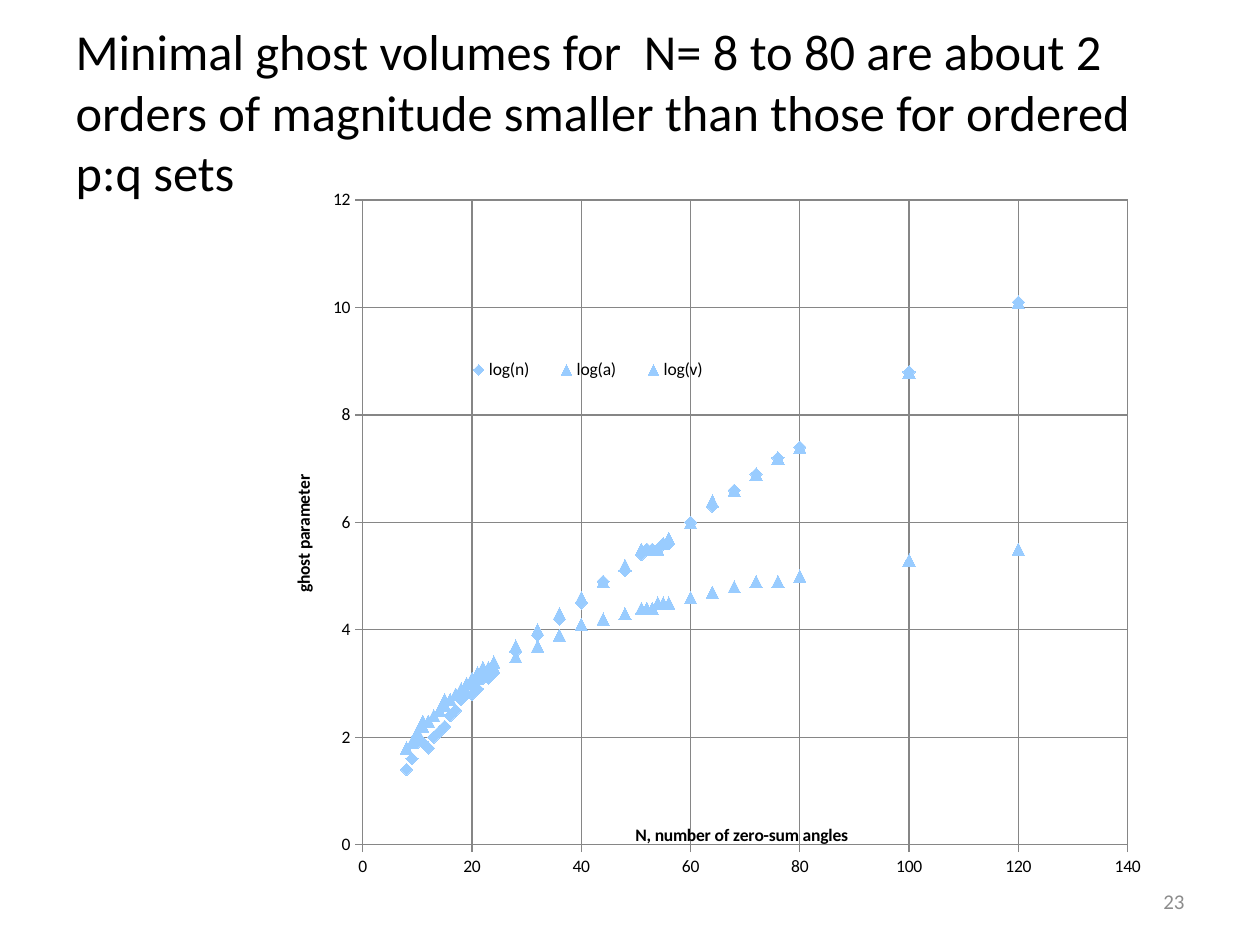
from dataclasses import dataclass

from lxml.etree import SubElement
from pptx import Presentation
from pptx.chart.data import XyChartData
from pptx.dml.color import RGBColor
from pptx.enum.chart import XL_CHART_TYPE as ChartType, XL_LEGEND_POSITION as LegendSide
from pptx.enum.chart import XL_MARKER_STYLE as Marker, XL_TICK_MARK as Tick
from pptx.enum.text import MSO_ANCHOR as Anchor, PP_ALIGN as Align
from pptx.oxml.ns import qn
from pptx.util import Pt


@dataclass(frozen=True)
class Theme:
    face: str = "Calibri"
    ink: RGBColor = RGBColor(0, 0, 0)
    muted: RGBColor = RGBColor(0x8C, 0x8C, 0x8C)
    grid: RGBColor = RGBColor(0x86, 0x86, 0x86)
    point: RGBColor = RGBColor(0x99, 0xCC, 0xFF)
    title_size: float = 28.8
    number_size: float = 12
    chart_size: float = 10
    marker_size: int = 7


ANGLE_COUNTS = [*range(8, 25), *range(28, 49, 4), *range(51, 57), *range(60, 81, 4), 100, 120]
GHOST_LOGS = {
    "log(n)": (Marker.DIAMOND, [
        1.4, 1.6, 1.9, 1.9, 1.8, 2, 2.1, 2.2, 2.4, 2.5, 2.7, 2.8, 2.8, 2.9, 3.1, 3.1, 3.2,
        3.6, 3.9, 4.2, 4.5, 4.9, 5.1, 5.4, 5.5, 5.5, 5.5, 5.6, 5.6,
        6, 6.3, 6.6, 6.9, 7.2, 7.4, 8.8, 10.1]),
    "log(a)": (Marker.TRIANGLE, [
        1.8, 1.9, 2.1, 2.3, 2.3, 2.4, 2.5, 2.6, 2.7, 2.8, 2.9, 3, 3, 3.1, 3.2, 3.2, 3.3,
        3.5, 3.7, 3.9, 4.1, 4.2, 4.3, 4.4, 4.4, 4.4, 4.5, 4.5, 4.5,
        4.6, 4.7, 4.8, 4.9, 4.9, 5, 5.3, 5.5]),
    "log(v)": (Marker.TRIANGLE, [
        1.8, 1.9, 2.1, 2.2, 2.3, 2.4, 2.5, 2.7, 2.7, 2.8, 2.9, 3, 3.1, 3.2, 3.3, 3.3, 3.4,
        3.7, 4, 4.3, 4.6, 4.9, 5.2, 5.5, 5.5, 5.5, 5.5, 5.6, 5.7,
        6, 6.4, 6.6, 6.9, 7.2, 7.4, 8.8, 10.1]),
}


class SlideBuilder:
    def __init__(self, slide, theme):
        self.slide = slide
        self.theme = theme

    def style(self, font, size, color, bold=False):
        font.name, font.size, font.bold = self.theme.face, Pt(size), bold
        font.color.rgb = color

    def set_text(self, holder, text, size, color, align):
        frame = holder.text_frame
        frame.word_wrap = True
        frame.vertical_anchor = Anchor.MIDDLE
        line = frame.paragraphs[0]
        line.text, line.alignment = text, align
        self.style(line.font, size, color)

    def title(self, text, left, top, width, height):
        heading = self.slide.shapes.title
        heading.left, heading.top = Pt(left), Pt(top)
        heading.width, heading.height = Pt(width), Pt(height)
        self.set_text(heading, text, self.theme.title_size, self.theme.ink, Align.LEFT)

    def page_number(self, text, left, top, width, height):
        number = self.slide.shapes.add_textbox(Pt(left), Pt(top), Pt(width), Pt(height))
        self.set_text(number, text, self.theme.number_size, self.theme.muted, Align.RIGHT)

    def place(self, parent, index, **fractions):
        for old in parent.findall(qn("c:layout")):
            parent.remove(old)
        layout = SubElement(parent, qn("c:layout"))
        parent.insert(index, layout)
        manual = SubElement(layout, qn("c:manualLayout"))
        if index == 0:
            SubElement(manual, qn("c:layoutTarget")).set("val", "inner")
        for side in ("x", "y"):
            SubElement(manual, qn(f"c:{side}Mode")).set("val", "edge")
        for side, fraction in fractions.items():
            SubElement(manual, qn(f"c:{side}")).set("val", str(fraction))

    def axis(self, axis, caption, maximum, step, x, y):
        axis.minimum_scale, axis.maximum_scale, axis.major_unit = 0, maximum, step
        axis.has_major_gridlines = True
        axis.major_tick_mark, axis.minor_tick_mark = Tick.OUTSIDE, Tick.NONE
        axis.tick_labels.number_format = "General"
        axis.tick_labels.number_format_is_linked = False
        for line in (axis.format.line, axis.major_gridlines.format.line):
            line.color.rgb, line.width = self.theme.grid, Pt(0.75)
        heading = axis.axis_title
        label = heading.text_frame.paragraphs[0]
        label.text = caption
        self.style(label.font, self.theme.chart_size, self.theme.ink, bold=True)
        self.place(heading._element, 1, x=x, y=y)

    def scatter(self, left, top, width, height):
        logs = XyChartData()
        for name, (_, values) in GHOST_LOGS.items():
            curve = logs.add_series(name)
            for count, value in zip(ANGLE_COUNTS, values):
                curve.add_data_point(count, value)
        chart = self.slide.shapes.add_chart(
            ChartType.XY_SCATTER, Pt(left), Pt(top), Pt(width), Pt(height), logs).chart
        self.style(chart.font, self.theme.chart_size, self.theme.ink)
        chart.has_title = False
        plot = chart.plots[0]
        plot.vary_by_categories = False
        self.place(chart._chartSpace.chart.plotArea, 0, x=0.104, y=0.061, w=0.869, h=0.888)
        self.axis(chart.category_axis, "N, number of zero-sum angles", 140, 20, x=0.41, y=0.915)
        self.axis(chart.value_axis, "ghost parameter", 12, 2, x=0.02, y=0.435)
        chart.has_legend = True
        chart.legend.position = LegendSide.BOTTOM
        chart.legend.include_in_layout = False
        self.place(chart.legend._element, 1, x=0.2, y=0.27, w=0.32, h=0.05)
        for curve, (symbol, _) in zip(plot.series, GHOST_LOGS.values()):
            curve.smooth = False
            curve.format.line.fill.background()
            curve.marker.style, curve.marker.size = symbol, self.theme.marker_size
            curve.marker.format.fill.solid()
            curve.marker.format.fill.fore_color.rgb = self.theme.point
            curve.marker.format.line.fill.background()


def main():
    deck = Presentation()
    deck.slide_width, deck.slide_height = Pt(720), Pt(540)
    page = SlideBuilder(deck.slides.add_slide(deck.slide_layouts[5]), Theme())
    page.title("Minimal ghost volumes for  N= 8 to 80 are about 2 orders of magnitude "
               "smaller than those for ordered p:q sets", 36, 24, 661, 79)
    page.scatter(155, 89, 503, 415)
    page.page_number("23", 516, 500.5, 168, 28.75)
    deck.save("out.pptx")


if __name__ == "__main__":
    main()
